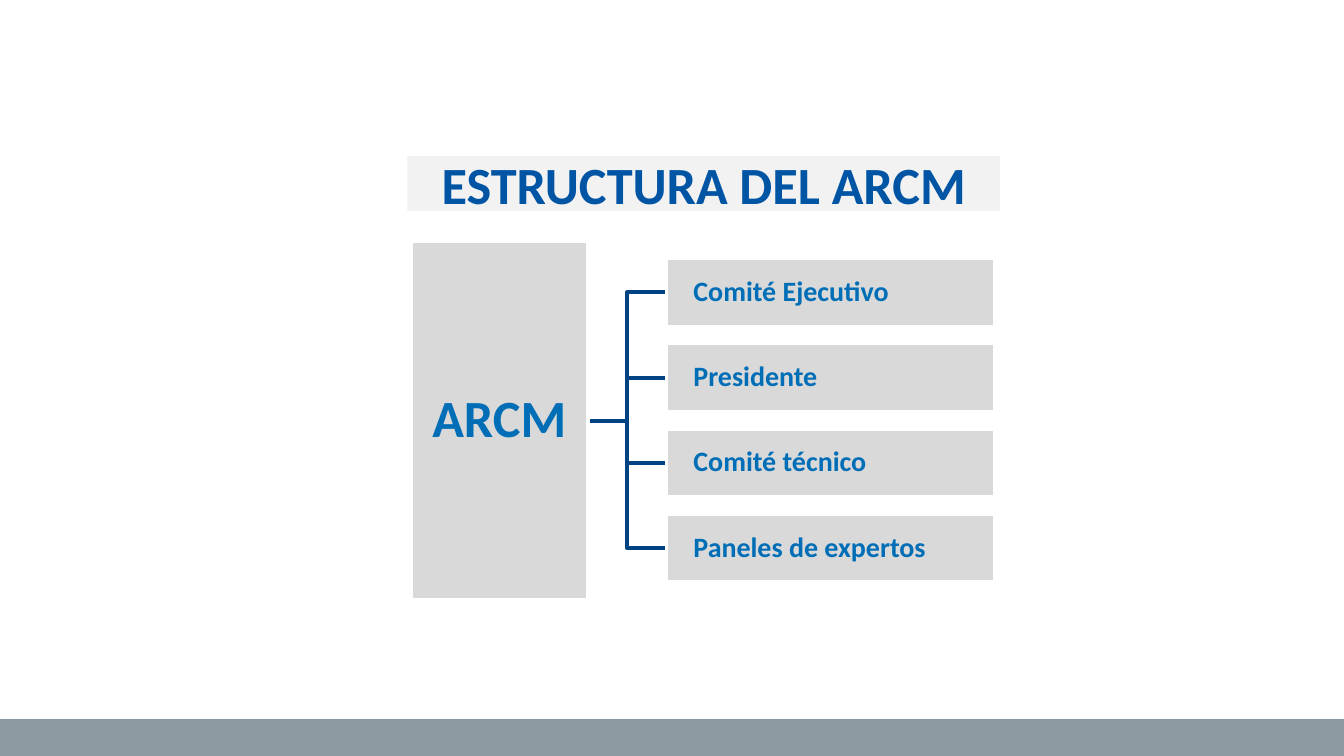
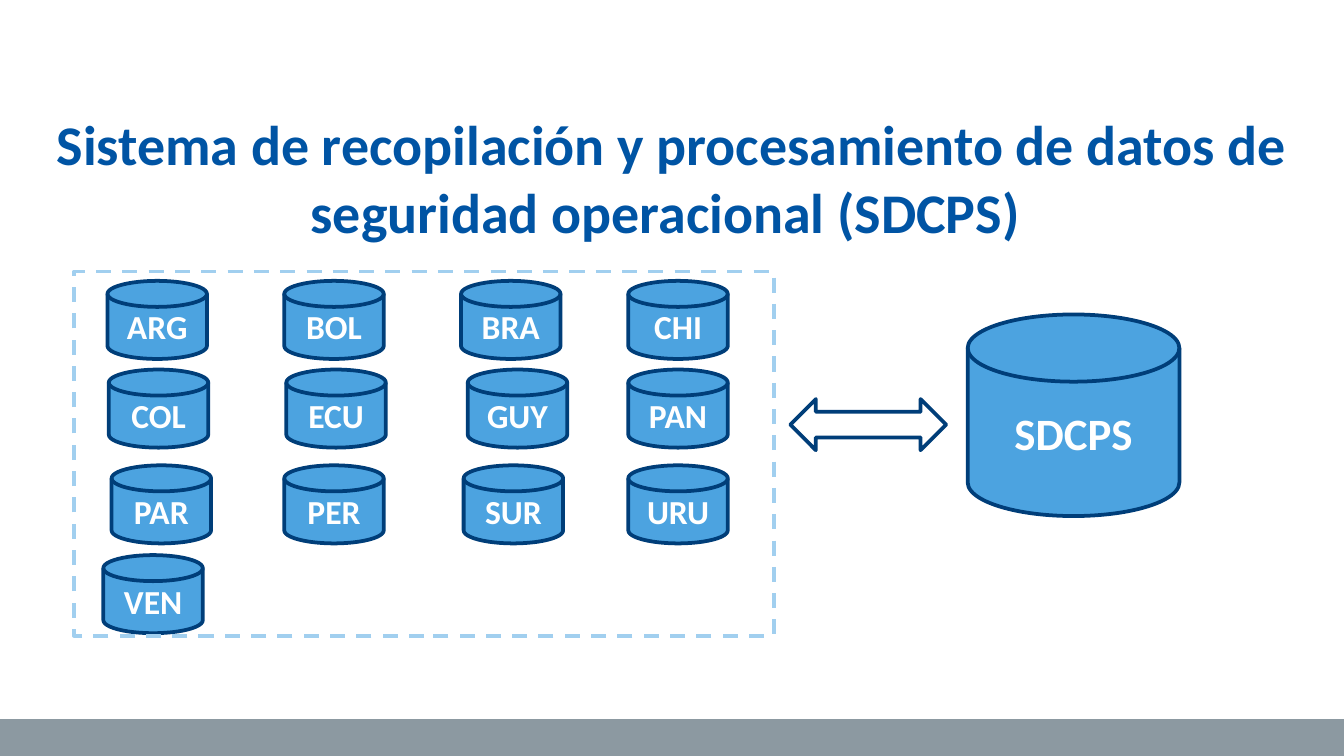
from pptx import Presentation
from pptx.dml.color import RGBColor
from pptx.enum import dml, shapes, text
from pptx.util import Pt

SLIDE_W, SLIDE_H = 720, 405
BAND_TOP = 385.2
FONT = "Calibri"
TITLE_BLUE, TEXT_BLUE, LINK_BLUE = "0054A4", "006EB7", "004383"
DISK_BLUE, OUTLINE_BLUE, FRAME_BLUE = "4CA3E0", "003E79", "A1CFEF"
WHITE, PALE_GRAY, BOX_GRAY, BAND_GRAY = "FFFFFF", "F2F2F2", "D9D9D9", "8C99A1"

STRUCTURE_TITLE = "ESTRUCTURA DEL ARCM"
ROOT = "ARCM"
BRANCHES = ["Comité Ejecutivo", "Presidente", "Comité técnico", "Paneles de expertos"]

SYSTEM_TITLE = ("Sistema de recopilación y procesamiento de datos de "
                "seguridad operacional (SDCPS) ")
SYSTEM = "SDCPS"
# Each row: top, then (state, left) pairs
STATE_ROWS = [
    (150.5, [("ARG", 57.6), ("BOL", 152.3), ("BRA", 247), ("CHI", 336.6)]),
    (198, [("COL", 58.3), ("ECU", 153.4), ("GUY", 250.6), ("PAN", 336.6)]),
    (249.3, [("PAR", 59.8), ("PER", 152.3), ("SUR", 248.4), ("URU", 336.6)]),
    (297.4, [("VEN", 55.4)]),
]

Kind = shapes.MSO_SHAPE
CENTER, LEFT = text.PP_ALIGN.CENTER, text.PP_ALIGN.LEFT


def color(hex_code):
    return RGBColor.from_string(hex_code)


def style(shape, fill=None, line=None):
    shape.shadow.inherit = False
    if fill:
        shape.fill.solid()
        shape.fill.fore_color.rgb = color(fill)
    else:
        shape.fill.background()
    if line:
        shape.line.color.rgb = color(line)
        shape.line.width = Pt(2)
    else:
        shape.line.fill.background()
    return shape


def add_shape(slide, kind, box, fill=None, line=None):
    return style(slide.shapes.add_shape(kind, *map(Pt, box)), fill, line)


def write(shape, words, size, hue, align=CENTER, anchor=text.MSO_ANCHOR.MIDDLE,
          spacing=None, insets=None):
    """Fill a shape with one bold paragraph; insets are (left, other sides)."""
    frame = shape.text_frame
    frame.word_wrap = True
    frame.vertical_anchor = anchor
    if insets:
        frame.margin_left = Pt(insets[0])
        frame.margin_right = frame.margin_top = frame.margin_bottom = Pt(insets[1])
    paragraph = frame.paragraphs[0]
    paragraph.text = words
    paragraph.alignment = align
    if spacing:
        paragraph.line_spacing = spacing
    font = paragraph.font
    font.name, font.size, font.bold = FONT, Pt(size), True
    font.color.rgb = color(hue)


def add_slide(deck):
    slide = deck.slides.add_slide(deck.slide_layouts[6])
    add_shape(slide, Kind.RECTANGLE,
              (0, BAND_TOP, SLIDE_W, SLIDE_H - BAND_TOP), BAND_GRAY)
    return slide


def add_elbow(slide, start, end):
    """Draw a right-angled link that turns halfway across."""
    (x1, y1), (x2, y2) = start, end
    middle = (x1 + x2) / 2
    path = slide.shapes.build_freeform(Pt(x1), Pt(y1))
    corners = [(middle, y1), (middle, y2), (x2, y2)]
    path.add_line_segments([(Pt(x), Pt(y)) for x, y in corners], close=False)
    style(path.convert_to_shape(), line=LINK_BLUE)


def add_disk(slide, box, label, size):
    disk = add_shape(slide, Kind.FLOWCHART_MAGNETIC_DISK, box, DISK_BLUE, OUTLINE_BLUE)
    write(disk, label, size, WHITE)


def build_structure(deck):
    slide = add_slide(deck)
    root_left, root_top, root_w, root_h = 220, 129.2, 95, 192.3
    branch_left, first_top, branch_w, branch_h, pitch = 357.1, 138.3, 175.7, 36.6, 45.7
    root_side = (root_left + root_w, root_top + root_h / 2)
    tops = [first_top + i * pitch for i in range(len(BRANCHES))]

    for top in tops:
        add_elbow(slide, root_side, (branch_left, top + branch_h / 2))
    root = add_shape(slide, Kind.RECTANGLE, (root_left, root_top, root_w, root_h),
                     BOX_GRAY, WHITE)
    write(root, ROOT, 28, TEXT_BLUE, spacing=0.9, insets=(1.4, 1.4))
    for label, top in zip(BRANCHES, tops):
        branch = add_shape(slide, Kind.RECTANGLE, (branch_left, top, branch_w, branch_h),
                           BOX_GRAY, WHITE)
        write(branch, label, 15, TEXT_BLUE, LEFT, spacing=0.9, insets=(14.4, 0.7))

    title = add_shape(slide, Kind.RECTANGLE, (218.2, 83.5, 317.5, 29.5), PALE_GRAY)
    write(title, STRUCTURE_TITLE, 28, TITLE_BLUE)


def build_system(deck):
    slide = add_slide(deck)
    for top, states in STATE_ROWS:
        for state, left in states:
            add_disk(slide, (left, top, 53.3, 41.8), state, 18)
    frame = add_shape(slide, Kind.RECTANGLE, (39.6, 145.5, 375, 195.1), line=FRAME_BLUE)
    frame.line.dash_style = dml.MSO_LINE.DASH
    add_shape(slide, Kind.LEFT_RIGHT_ARROW, (423.4, 213.8, 83.5, 27.4), line=OUTLINE_BLUE)
    add_disk(slide, (518.4, 168.5, 113.4, 108), SYSTEM, 24)

    title = slide.shapes.add_textbox(*map(Pt, (0, 55.4, SLIDE_W, 79.9)))
    write(title, SYSTEM_TITLE, 30, TITLE_BLUE, anchor=text.MSO_ANCHOR.TOP)
    title.text_frame.auto_size = text.MSO_AUTO_SIZE.SHAPE_TO_FIT_TEXT


def main():
    deck = Presentation()
    deck.slide_width, deck.slide_height = Pt(SLIDE_W), Pt(SLIDE_H)
    build_structure(deck)
    build_system(deck)
    deck.save("out.pptx")


if __name__ == "__main__":
    main()
